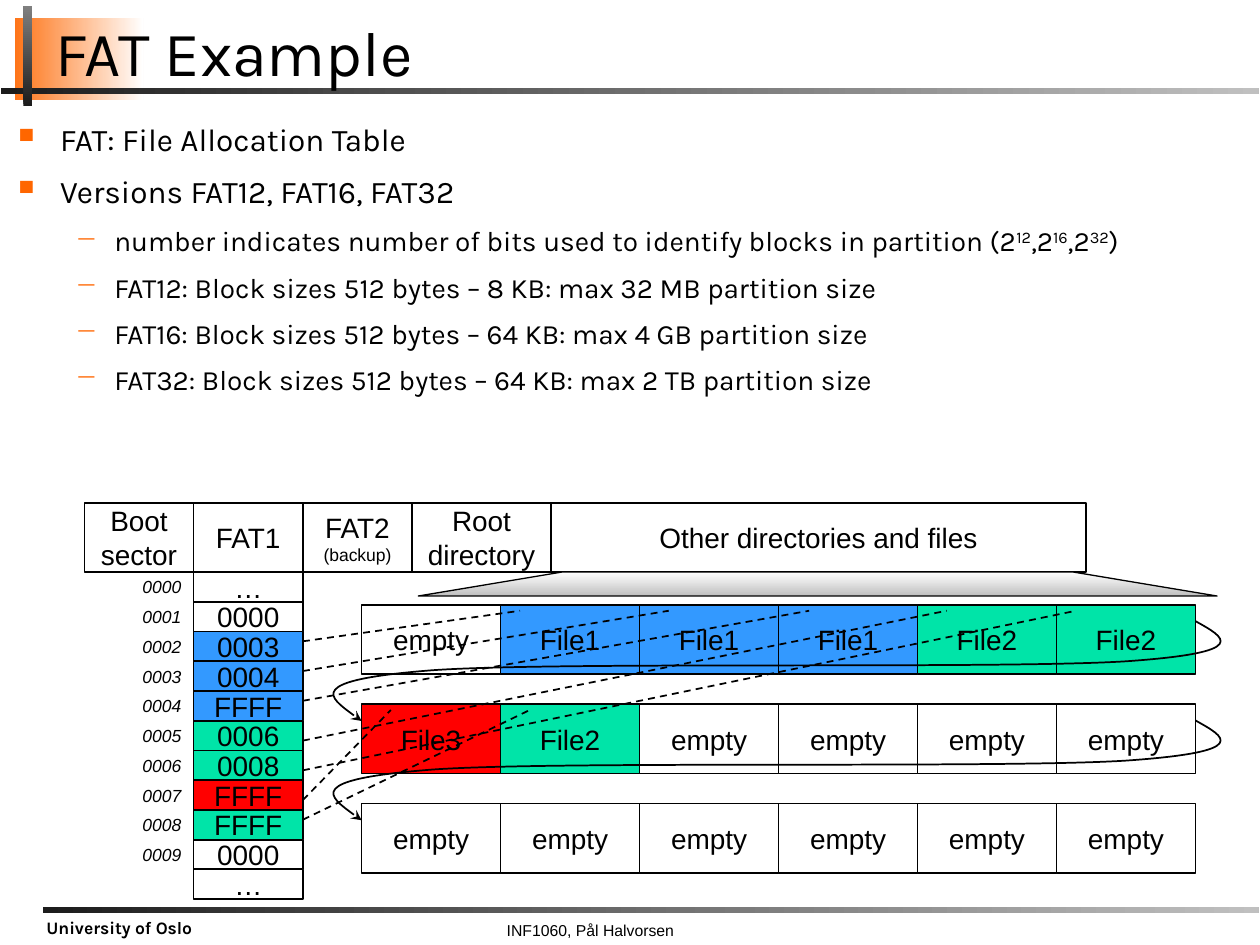
"""Build the slide that explains the File Allocation Table with an example."""
from dataclasses import dataclass
from typing import Any, NamedTuple, Optional

from lxml.etree import SubElement
from pptx import Presentation
from pptx.dml.color import RGBColor
from pptx.enum.dml import MSO_LINE
from pptx.enum.shapes import MSO_CONNECTOR, MSO_SHAPE
from pptx.enum.text import MSO_ANCHOR, PP_ALIGN
from pptx.oxml.ns import qn
from pptx.util import Inches, Pt

COLORS = {
    "black": "000000", "white": "FFFFFF", "orange": "FE7519", "bullet": "FF6600",
    "dark": "1C1C1C", "middle": "808080", "silver": "C0C0C0",
    "file1": "3399FF", "file2": "00E4A8", "file3": "FF0000",
}


@dataclass(frozen=True)
class Grid:
    left: float
    top: float
    column: float
    row: float

    def point(self, column: float, row: float) -> tuple[int, int]:
        return Inches(self.left + column * self.column), Inches(self.top + row * self.row)

    def area(self, column: float, row: float, columns: float, rows: float) -> tuple[int, ...]:
        return (*self.point(column, row), Inches(columns * self.column), Inches(rows * self.row))


class Bar(NamedTuple):
    area: tuple[float, float, float, float]
    start: str
    end: str
    angle: int = 0


class Bullet(NamedTuple):
    text: str
    level: int


class Section(NamedTuple):
    lines: tuple[str, ...]
    columns: float
    last_size: int = 16


class Entry(NamedTuple):
    text: str
    color: Optional[str] = None


class Link(NamedTuple):
    entry_row: float
    block_column: float
    block_row: int


PAGE = Grid(0, 0, 0.1, 0.1)
FAT = Grid(0.67, 4.54, 0.867, 0.236)
BLOCKS = Grid(2.87, 4.8, 1.103, 0.788)
BLOCK_HEIGHT = 0.7
HEADER_ROWS = 2.33

BARS = (
    Bar((1.2, 1.4, 10.2, 6.5), "orange", "white"),
    Bar((0.1, 7, 99.8, 0.5), "dark", "silver"),
    Bar((1.85, 0.45, 0.7, 8), "dark", "middle", 90),
    Bar((3.4, 72, 96.5, 0.5), "dark", "silver"),
)
BULLETS = (
    Bullet("FAT: File Allocation Table", 0),
    Bullet("Versions FAT12, FAT16, FAT32", 0),
    Bullet("number indicates number of bits used to identify blocks in partition (2^12^,2^16^,2^32^)", 1),
    Bullet("FAT12: Block sizes 512 bytes – 8 KB: max 32 MB partition size", 1),
    Bullet("FAT16: Block sizes 512 bytes – 64 KB: max 4 GB partition size", 1),
    Bullet("FAT32: Block sizes 512 bytes – 64 KB: max 2 TB partition size", 1),
)
SECTIONS = (
    Section(("Boot", "sector"), 1), Section(("FAT1",), 1), Section(("FAT2", "(backup)"), 1, 10),
    Section(("Root", "directory"), 1.27), Section(("Other directories and files",), 4.9),
)
ENTRIES = (
    Entry("…"), Entry("0000"), Entry("0003", "file1"), Entry("0004", "file1"),
    Entry("FFFF", "file1"), Entry("0006", "file2"), Entry("0008", "file2"),
    Entry("FFFF", "file3"), Entry("FFFF", "file2"), Entry("0000"), Entry("…"),
)
FILES = (
    ("empty", "File1", "File1", "File1", "File2", "File2"),
    ("File3", "File2", "empty", "empty", "empty", "empty"),
    ("empty",) * 6,
)
LINKS = (
    Link(2.33, 1.14, 0), Link(3.33, 2.21, 0), Link(4.33, 3.22, 0), Link(5.67, 4.21, 0),
    Link(6.67, 5.14, 0), Link(8.33, 1.21, 1), Link(7.67, 0.21, 1),
)
WRAP_CURVE = (
    (6, 0.165), (6.21, 0.33), (6.42, 0.48), (5.5, 0.57), (4.59, 0.65),
    (1.42, 0.57), (0.51, 0.66), (-0.42, 0.76), (-0.21, 0.96), (0, 1.17),
)
FUNNEL = ((33.2, 47.3), (44.6, 45.4), (85.2, 45.4), (96.6, 47.3))


def rgb(name: str) -> RGBColor:
    return RGBColor.from_string(COLORS[name])


def write(frame: Any, text: str, *, size: float = 16, font: str = "Arial", bold: bool = False,
          italic: bool = False, align: PP_ALIGN = PP_ALIGN.CENTER) -> Any:
    para = frame.paragraphs[0] if not frame.text else frame.add_paragraph()
    para.alignment = align
    for position, part in enumerate(text.split("^")):
        span = para.add_run()
        span.text = part
        span.font.size, span.font.name = Pt(size), font
        span.font.bold, span.font.italic = bold, italic
        span.font.color.rgb = rgb("black")
        if position % 2:
            span.font._element.set("baseline", "30000")
    return para


def shade(shape: Any, start: str, end: str, angle: int) -> None:
    shape.shadow.inherit = False
    shape.fill.gradient()
    shape.fill.gradient_angle = angle
    for stop, name in zip(shape.fill.gradient_stops, (start, end)):
        stop.color.rgb = rgb(name)


def outline(shape: Any, width: float = 1) -> None:
    shape.line.color.rgb = rgb("black")
    shape.line.width = Pt(width)


def add_box(page: Any, area: tuple[int, ...], wrap: bool = True,
            anchor: MSO_ANCHOR = MSO_ANCHOR.TOP) -> Any:
    frame = page.shapes.add_textbox(*area).text_frame
    frame.word_wrap, frame.vertical_anchor = wrap, anchor
    return frame


def add_cell(page: Any, area: tuple[int, ...], color: Optional[str] = None) -> Any:
    box = page.shapes.add_shape(MSO_SHAPE.RECTANGLE, *area)
    box.shadow.inherit = False
    if color:
        box.fill.solid()
        box.fill.fore_color.rgb = rgb(color)
    else:
        box.fill.background()
    outline(box)
    box.text_frame.word_wrap = False
    box.text_frame.vertical_anchor = MSO_ANCHOR.MIDDLE
    return box.text_frame


def add_bullet(frame: Any, bullet: Bullet) -> None:
    size, margin, hanging, mark, scale = ((18, 0.38, 0.38, "▪", 120), (16, 0.81, 0.31, "−", 100))[bullet.level]
    first = not frame.text
    para = write(frame, bullet.text, size=size, font="Karla", align=PP_ALIGN.LEFT)
    para.level, para.line_spacing = bullet.level, 0.85
    para.space_before = Pt(0 if first else 0.21 * size)
    para.space_after = Pt(0.42 * size)
    properties = para._p.get_or_add_pPr()
    properties.set("marL", str(Inches(margin)))
    properties.set("indent", str(-Inches(hanging)))
    SubElement(SubElement(properties, qn("a:buClr")), qn("a:srgbClr"), val=COLORS["bullet"])
    SubElement(properties, qn("a:buSzPct"), val=str(scale * 1000))
    SubElement(properties, qn("a:buChar"), char=mark)


def add_outline(page: Any, points: list[tuple[int, int]], close: bool) -> Any:
    builder = page.shapes.build_freeform(*points[0], scale=1.0)
    builder.add_line_segments(points[1:], close=close)
    shape = builder.convert_to_shape()
    shape.shadow.inherit = False
    return shape


def add_wrap_arrow(page: Any, row: int) -> None:
    arrow = add_outline(page, [BLOCKS.point(x, y + row) for x, y in WRAP_CURVE], False)
    arrow.fill.background()
    outline(arrow)
    SubElement(arrow.line._get_or_add_ln(), qn("a:tailEnd"), type="stealth")
    route = arrow._element.find(".//" + qn("a:path"))
    segments = route.findall(qn("a:lnTo"))
    for start in range(0, len(segments), 3):
        curve = SubElement(route, qn("a:cubicBezTo"))
        for segment in segments[start:start + 3]:
            curve.append(segment[0])
            route.remove(segment)


def add_link(page: Any, link: Link) -> None:
    line = page.shapes.add_connector(
        MSO_CONNECTOR.STRAIGHT, *FAT.point(2, link.entry_row),
        *BLOCKS.point(link.block_column, link.block_row + 0.06))
    outline(line)
    line.line.dash_style = MSO_LINE.DASH
    SubElement(line._element.spPr, qn("a:effectLst"))


def add_frame(page: Any) -> None:
    for bar in BARS:
        shape = page.shapes.add_shape(MSO_SHAPE.RECTANGLE, *PAGE.area(*bar.area))
        shade(shape, bar.start, bar.end, bar.angle)
        shape.line.fill.background()
    course = add_box(page, PAGE.area(18.9, 72.8, 55.9, 2.3))
    write(course, "INF1060, Pål Halvorsen", size=9)
    school = add_box(page, PAGE.area(2.7, 72.5, 16.3, 2.4))
    write(school, "University of Oslo", size=10, font="Karla", bold=True, align=PP_ALIGN.LEFT)
    for frame in (course, school):
        frame.margin_top = Inches(0.03)
    title = add_box(page, PAGE.area(3.4, 1.4, 96.2, 6.1), anchor=MSO_ANCHOR.BOTTOM)
    write(title, "FAT Example", size=36, font="Karla", align=PP_ALIGN.LEFT).line_spacing = 0.8


def add_disk(page: Any) -> None:
    column = 0.0
    for section in SECTIONS:
        frame = add_cell(page, FAT.area(column, -HEADER_ROWS, section.columns, HEADER_ROWS))
        for text in section.lines:
            write(frame, text, size=section.last_size if text == section.lines[-1] else 16)
        column += section.columns
    for row, entry in enumerate(ENTRIES):
        write(add_cell(page, FAT.area(1, row, 1, 1), entry.color), entry.text)
    for row, names in enumerate(FILES):
        for position, name in enumerate(names):
            color = "white" if name == "empty" else name.lower()
            write(add_cell(page, BLOCKS.area(position, row, 1, BLOCK_HEIGHT), color), name)


def main() -> None:
    deck = Presentation()
    deck.slide_width, deck.slide_height = PAGE.point(100, 75)
    page = deck.slides.add_slide(deck.slide_layouts[6])
    add_frame(page)
    body = add_box(page, PAGE.area(0, 9.5, 100, 25.6))
    for bullet in BULLETS:
        add_bullet(body, bullet)
    add_disk(page)
    for row in range(2):
        add_wrap_arrow(page, row)
    for link in LINKS:
        add_link(page, link)
    for number in range(10):
        label = add_box(page, FAT.area(0, number, 1, 1), False, MSO_ANCHOR.MIDDLE)
        write(label, f"{number:04}", size=10, italic=True, align=PP_ALIGN.RIGHT)
    funnel = add_outline(page, [PAGE.point(*corner) for corner in FUNNEL], True)
    shade(funnel, "white", "silver", 270)
    outline(funnel, 0.75)
    deck.save("out.pptx")


if __name__ == "__main__":
    main()
